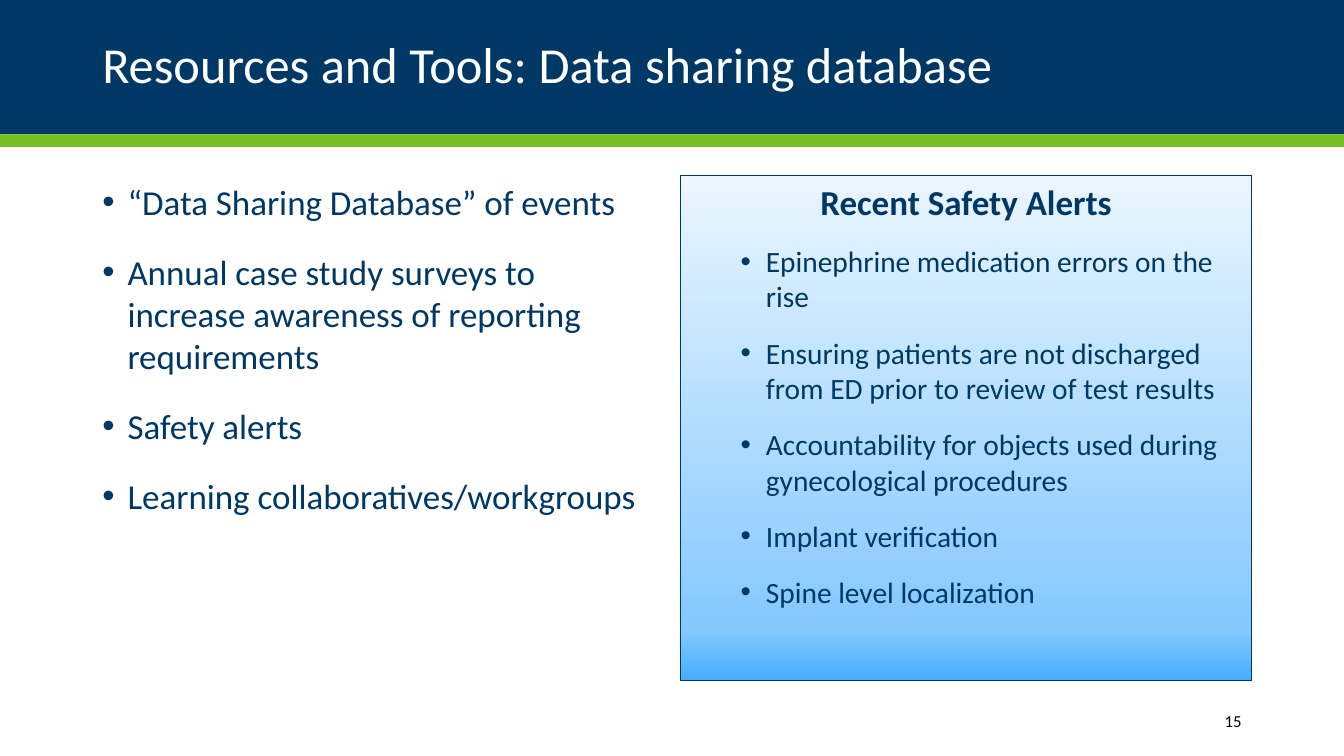
from copy import deepcopy

from lxml import etree
from pptx import Presentation
from pptx import util as u
from pptx.dml.color import RGBColor
from pptx.enum import shapes, text
from pptx.oxml.ns import qn

PX = 9525
WIDTH, HEIGHT = 1280, 720
MARGIN = 88
NAVY, GREEN, WHITE, BLACK = "003865", "78BE21", "FFFFFF", "000000"
FONT = "Calibri"
INDENT = 24

TOPICS = [
    "“Data Sharing Database” of events",
    "Annual case study surveys to increase awareness of reporting requirements",
    "Safety alerts",
    "Learning collaboratives/workgroups",
]
ALERTS = [
    "Epinephrine medication errors on the rise",
    "Ensuring patients are not discharged from ED prior to review of test results",
    "Accountability for objects used during gynecological procedures",
    "Implant verification",
    "Spine level localization",
]
ALERT_GRADIENT = [(0, "EBF6FF"), (90, "84C8FF"), (100, "47ADFF")]

HEADING = {"alignment": text.PP_ALIGN.CENTER, "space_before": u.Pt(10), "space_after": u.Pt(10)}
TOPIC = {**HEADING, "alignment": text.PP_ALIGN.LEFT}
ALERT = {**TOPIC, "space_before": u.Pt(5), "level": 1}


def color(value):
    return RGBColor.from_string(value)


def emu(box):
    return [length * PX for length in box]


def set_attributes(target, values):
    for name, value in values.items():
        setattr(target, name, value)


def add_rectangle(slide, box, fill=None):
    shape = slide.shapes.add_shape(shapes.MSO_SHAPE.RECTANGLE, *emu(box))
    shape.shadow.inherit = False
    shape.line.fill.background()
    if fill:
        shape.fill.solid()
        shape.fill.fore_color.rgb = color(fill)
    return shape


def set_frame(shape, anchor):
    frame = shape.text_frame
    set_attributes(frame, {"word_wrap": True, "vertical_anchor": anchor})
    return frame


def write(paragraph, wording, size, fill, layout, bold=False):
    set_attributes(paragraph, layout)
    run = paragraph.add_run()
    run.text = wording
    set_attributes(run.font, {"name": FONT, "size": u.Pt(size), "bold": bold})
    run.font.color.rgb = color(fill)


def add_bullet(paragraph, left):
    """Hang a navy bullet; left is the start of the text in px."""
    properties = paragraph._p.get_or_add_pPr()
    properties.set("marL", str(left * PX))
    properties.set("indent", str(-INDENT * PX))
    bullet_color = etree.SubElement(properties, qn("a:buClr"))
    etree.SubElement(bullet_color, qn("a:srgbClr"), val=NAVY)
    etree.SubElement(properties, qn("a:buFont"), typeface="Arial")
    etree.SubElement(properties, qn("a:buChar"), char="•")


def fill_gradient(shape, stops):
    """Fill from top to bottom with (percent, colour) stops."""
    shape.fill.gradient()
    shape.fill.gradient_angle = 270
    stop_list = shape.fill._xPr.find(qn("a:gradFill")).find(qn("a:gsLst"))
    stop_list.append(deepcopy(stop_list[-1]))
    for stop, (percent, value) in zip(shape.fill.gradient_stops, stops):
        stop.position = percent / 100
        stop.color.rgb = color(value)


def add_header(slide, box, title):
    left, top, width, height = box
    add_rectangle(slide, box, NAVY)
    add_rectangle(slide, (left, top + height, width, 12), GREEN)
    title_box = (left + MARGIN, top + 16, width - 2 * MARGIN, 96)
    frame = set_frame(slide.shapes.add_textbox(*emu(title_box)), text.MSO_ANCHOR.MIDDLE)
    write(frame.paragraphs[0], title, 36, WHITE, {"line_spacing": 0.9})


def add_topics(slide, box):
    frame = set_frame(add_rectangle(slide, box, WHITE), text.MSO_ANCHOR.TOP)
    for index, topic in enumerate(TOPICS):
        paragraph = frame.add_paragraph() if index else frame.paragraphs[0]
        write(paragraph, topic, 25, NAVY, TOPIC)
        add_bullet(paragraph, INDENT)


def add_alerts(slide, box):
    panel = add_rectangle(slide, box)
    fill_gradient(panel, ALERT_GRADIENT)
    panel.line.color.rgb = color(NAVY)
    panel.line.width = u.Pt(1)
    frame = set_frame(panel, text.MSO_ANCHOR.TOP)
    write(frame.paragraphs[0], "Recent Safety Alerts", 25, NAVY, HEADING, bold=True)
    for alert in ALERTS:
        paragraph = frame.add_paragraph()
        write(paragraph, alert, 21, NAVY, ALERT)
        add_bullet(paragraph, 3 * INDENT)


def add_slide_number(slide, box, number):
    frame = set_frame(slide.shapes.add_textbox(*emu(box)), text.MSO_ANCHOR.MIDDLE)
    write(frame.paragraphs[0], number, 12, BLACK, {"alignment": text.PP_ALIGN.RIGHT})


def main():
    presentation = Presentation()
    set_attributes(presentation, {"slide_width": WIDTH * PX, "slide_height": HEIGHT * PX})
    slide = presentation.slides.add_slide(presentation.slide_layouts[6])

    top, width, height = 167, 544, 481
    right = WIDTH - MARGIN
    add_header(slide, (0, 0, WIDTH, 128), "Resources and Tools: Data sharing database")
    add_topics(slide, (MARGIN, top, width, height))
    add_alerts(slide, (right - width, top, width, height))
    add_slide_number(slide, (right - 154, 667, 154, 38), "15")
    presentation.save("out.pptx")


if __name__ == "__main__":
    main()
